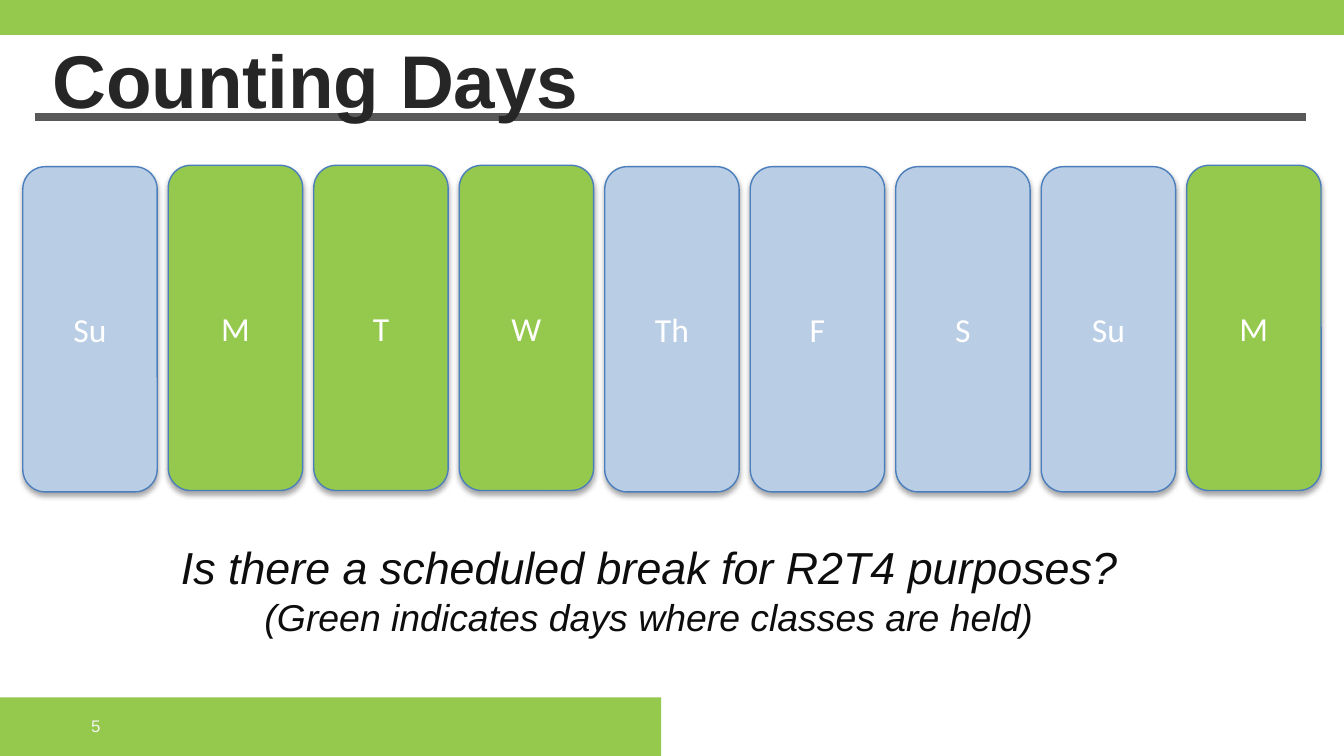
from dataclasses import dataclass

import lxml.etree
import pptx
import pptx.dml.color
import pptx.enum.shapes
import pptx.enum.text
import pptx.oxml.ns
import pptx.util

Inches = pptx.util.Inches
Pt = pptx.util.Pt
ALIGN = pptx.enum.text.PP_ALIGN
ANCHOR = pptx.enum.text.MSO_ANCHOR
SHAPE = pptx.enum.shapes.MSO_SHAPE


@dataclass(frozen=True)
class Theme:
    green: str = "95C94E"
    pale_blue: str = "B9CDE5"
    day_line: str = "4B7EBC"
    rule: str = "595959"
    title: str = "262626"
    question: str = "0D0D0D"
    white: str = "FFFFFF"
    page: str = "F2F2F2"
    shadow: str = "000000"
    text_font: str = "Arial"
    day_font: str = "Calibri"
    title_size: int = 40
    question_size: int = 24
    note_size: int = 20
    day_size: int = 18
    page_size: int = 9


THEME = Theme()
DAYS = ["Su", "M", "T", "W", "Th", "F", "S", "Su", "M"]
CLASS_DAYS = {"M", "T", "W"}


def rgb(value):
    return pptx.dml.color.RGBColor.from_string(value)


def style(paragraph, font, size, color, align=ALIGN.LEFT):
    paragraph.alignment = align
    paragraph.font.name = font
    paragraph.font.size = Pt(size)
    paragraph.font.color.rgb = rgb(color)


def add_filled(slide, preset, box, color):
    shape = slide.shapes.add_shape(preset, *map(Inches, box))
    shape.shadow.inherit = False
    shape.fill.solid()
    shape.fill.fore_color.rgb = rgb(color)
    shape.line.fill.background()
    return shape


def add_soft_shadow(shape):
    """Fill the shape's empty effect list with a shadow falling straight down."""
    qn = pptx.oxml.ns.qn
    effects = shape._element.spPr.find(qn("a:effectLst"))
    outer = lxml.etree.SubElement(
        effects, qn("a:outerShdw"), blurRad=str(Pt(3.1)), dist=str(Pt(1.8)),
        dir="5400000", rotWithShape="0")
    color = lxml.etree.SubElement(outer, qn("a:srgbClr"), val=THEME.shadow)
    lxml.etree.SubElement(color, qn("a:alpha"), val="35000")


def add_header(slide, left, top, width):
    # Band and rule
    add_filled(slide, SHAPE.RECTANGLE, (left - 0.02, top, width + 0.03, 0.26),
               THEME.green)
    rule_y = Inches(top + 0.87)
    rule = slide.shapes.add_connector(
        pptx.enum.shapes.MSO_CONNECTOR.STRAIGHT,
        Inches(left + 0.26), rule_y, Inches(left + width - 0.28), rule_y)
    rule.line.color.rgb = rgb(THEME.rule)
    rule.line.width = Pt(4)
    lxml.etree.SubElement(rule._element.spPr, pptx.oxml.ns.qn("a:effectLst"))

    # Title, brought in front of the rule
    title = slide.shapes.title
    slide.shapes._spTree.append(title._element)
    title.left, title.top = Inches(left + 0.29), Inches(top + 0.2)
    title.width, title.height = Inches(width - 0.65), Inches(0.53)
    frame = title.text_frame
    frame.text = "Counting Days"
    frame.auto_size = pptx.enum.text.MSO_AUTO_SIZE.NONE
    frame.vertical_anchor = ANCHOR.TOP
    heading = frame.paragraphs[0]
    style(heading, THEME.text_font, THEME.title_size, THEME.title)
    heading.font.bold = True


def add_days(slide, left, top, width, height):
    card_width = 1
    step = (width - card_width) / (len(DAYS) - 1)
    for index, day in enumerate(DAYS):
        held = day in CLASS_DAYS
        # Class days sit slightly higher than the others
        box = (left + index * step, top if held else top + 0.01, card_width, height)
        card = add_filled(slide, SHAPE.ROUNDED_RECTANGLE, box,
                          THEME.green if held else THEME.pale_blue)
        card.line.color.rgb = rgb(THEME.day_line)
        card.line.width = Pt(0.75)
        add_soft_shadow(card)
        card.text_frame.text = day
        card.text_frame.vertical_anchor = ANCHOR.MIDDLE
        style(card.text_frame.paragraphs[0], THEME.day_font, THEME.day_size,
              THEME.white, ALIGN.CENTER)


def add_question(slide, left, top, width, height):
    frame = slide.shapes.add_textbox(*map(Inches, (left, top, width, height))).text_frame
    frame.word_wrap = True
    paragraph = frame.paragraphs[0]
    style(paragraph, THEME.text_font, THEME.question_size, THEME.question, ALIGN.CENTER)
    paragraph.font.italic = True
    question = paragraph.add_run()
    question.text = "Is there a scheduled break for R2T4 purposes?"
    paragraph.add_line_break()
    note = paragraph.add_run()
    note.text = "(Green indicates days where classes are held)"
    note.font.size = Pt(THEME.note_size)


def add_footer(slide, left, top, width, height):
    add_filled(slide, SHAPE.RECTANGLE, (left, top, width, height), THEME.green)
    page_box = (left + 0.58, top + 0.06, 2.33, 0.3)
    frame = slide.shapes.add_textbox(*map(Inches, page_box)).text_frame
    frame.word_wrap = True
    frame.vertical_anchor = ANCHOR.MIDDLE
    frame.text = "5"
    style(frame.paragraphs[0], THEME.text_font, THEME.page_size, THEME.page)


def main():
    deck = pptx.Presentation()
    # Widescreen, 16:9
    deck.slide_width, deck.slide_height = Inches(10), Inches(10 * 9 / 16)
    slide = deck.slides.add_slide(deck.slide_layouts.get_by_name("Title Only"))
    add_header(slide, 0, 0, 10)
    add_days(slide, 0.17, 1.23, 9.66, 2.42)
    add_question(slide, 0.58, 3.97, 8.5, 0.84)
    add_footer(slide, 0, 5.19, 4.92, 0.44)
    deck.save("out.pptx")


if __name__ == "__main__":
    main()
